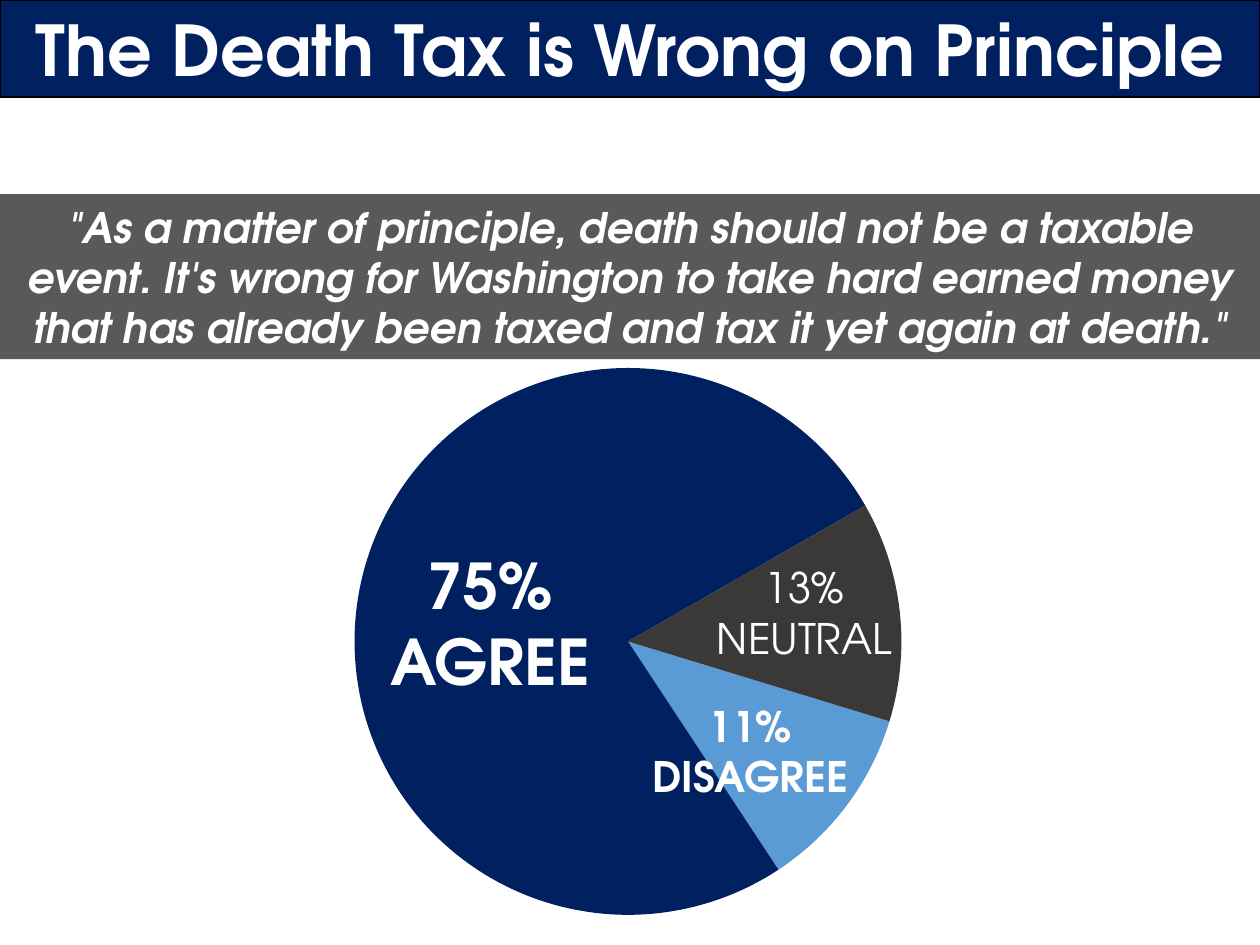
from dataclasses import dataclass

from lxml.etree import SubElement
from pptx import Presentation
from pptx.chart.data import CategoryChartData
from pptx.dml.color import RGBColor
from pptx.enum.chart import XL_CHART_TYPE as ChartType
from pptx.enum.shapes import MSO_SHAPE as Preset
from pptx.enum.text import MSO_ANCHOR as Anchor, MSO_AUTO_SIZE as AutoSize, PP_ALIGN as Align
from pptx.oxml.ns import qn
from pptx.slide import Slide
from pptx.text.text import TextFrame
from pptx.util import Pt

NAVY = RGBColor(0x00, 0x20, 0x60)
GRAY = RGBColor(0x59, 0x59, 0x59)
CHARCOAL = RGBColor(0x3B, 0x38, 0x38)
SKY = RGBColor(0x5B, 0x9B, 0xD5)
WHITE = RGBColor(0xFF, 0xFF, 0xFF)
BLACK = RGBColor(0x00, 0x00, 0x00)
FONT = "TeX Gyre Adventor"
PAGE_WIDTH, PAGE_HEIGHT = 720, 540
FIRST_SLICE_ANGLE = 107
PLOT_LAYOUT = {"x": 0.015, "y": 0.05, "w": 0.97, "h": 0.801}


@dataclass(frozen=True)
class SliceLabel:
    text: str
    left: float
    top: float
    width: float
    height: float
    size: int
    bold: bool = True


@dataclass(frozen=True)
class Slice:
    category: str
    value: int
    color: RGBColor


SLICES = (Slice("1", 11, SKY), Slice("2", 76, NAVY), Slice("3", 13, CHARCOAL))
LABELS = (
    SliceLabel("11%\nDISAGREE", 336.2, 396.7, 185, 65.5, 24),
    SliceLabel("75%\nAGREE", 154.1, 308.9, 252, 126, 36),
    SliceLabel("13%\nNEUTRAL", 367.2, 317.5, 185, 65.5, 24, bold=False),
)
QUOTE = (
    '"As a matter of principle, death should not be a taxable event. '
    "It's wrong for Washington to take hard earned money that has already "
    'been taxed and tax it yet again at death."'
)


def write_text(frame: TextFrame, text: str, size: int, bold: bool = True, italic: bool = False) -> None:
    frame.text = text
    frame.word_wrap = True
    frame.auto_size = AutoSize.NONE
    for para in frame.paragraphs:
        para.alignment = Align.CENTER
        for span in para.runs:
            font = span.font
            font.name, font.size = FONT, Pt(size)
            font.bold, font.italic = bold, italic
            font.color.rgb = WHITE


def add_title(page: Slide) -> None:
    title = page.shapes.title
    title.left, title.top, title.width, title.height = Pt(0), Pt(0), Pt(PAGE_WIDTH), Pt(55.4)
    title.fill.solid()
    title.fill.fore_color.rgb = NAVY
    title.line.color.rgb = BLACK
    title.line.width = Pt(0.75)
    write_text(title.text_frame, "The Death Tax is Wrong on Principle", 40)
    title.text_frame.vertical_anchor = Anchor.MIDDLE


def add_quote(page: Slide) -> None:
    band = page.shapes.add_shape(Preset.RECTANGLE, Pt(0), Pt(110.9), Pt(PAGE_WIDTH), Pt(94.3))
    band.shadow.inherit = False
    band.fill.solid()
    band.fill.fore_color.rgb = GRAY
    band.line.fill.background()
    write_text(band.text_frame, QUOTE, 24, italic=True)
    band.text_frame.vertical_anchor = Anchor.MIDDLE


def add_pie(page: Slide) -> None:
    data = CategoryChartData()
    data.categories = [piece.category for piece in SLICES]
    data.add_series("Series 1", [piece.value for piece in SLICES])
    chart = page.shapes.add_chart(
        ChartType.PIE, Pt(-46.8), Pt(190.8), Pt(811.4), Pt(390.2), data
    ).chart
    chart.has_title = False
    chart.has_legend = False
    chart.font.name, chart.font.size = "Calibri", Pt(18)
    chart.font.color.rgb = BLACK

    plot = chart.plots[0]
    plot.vary_by_categories = True
    for index, piece in enumerate(SLICES):
        point = plot.series[0].points[index].format
        point.fill.solid()
        point.fill.fore_color.rgb = piece.color
        point.line.fill.background()

    pie = chart.element.find(".//" + qn("c:pieChart"))
    angle = pie.find(qn("c:firstSliceAng"))
    if angle is None:
        angle = SubElement(pie, qn("c:firstSliceAng"))
    angle.set("val", str(FIRST_SLICE_ANGLE))

    area = chart.element.find(".//" + qn("c:plotArea"))
    layout = area.find(qn("c:layout"))
    if layout is None:
        layout = SubElement(area, qn("c:layout"))
        area.insert(0, layout)
    manual = SubElement(layout, qn("c:manualLayout"))
    settings = {"layoutTarget": "inner", "xMode": "edge", "yMode": "edge", **PLOT_LAYOUT}
    for name, value in settings.items():
        SubElement(manual, qn(f"c:{name}")).set("val", str(value))


def add_label(page: Slide, label: SliceLabel) -> None:
    box = page.shapes.add_textbox(Pt(label.left), Pt(label.top), Pt(label.width), Pt(label.height))
    write_text(box.text_frame, label.text, label.size, bold=label.bold)


def main() -> None:
    deck = Presentation()
    deck.slide_width, deck.slide_height = Pt(PAGE_WIDTH), Pt(PAGE_HEIGHT)
    page = deck.slides.add_slide(deck.slide_layouts[5])
    add_title(page)
    add_quote(page)
    add_pie(page)
    for label in LABELS:
        add_label(page, label)
    deck.save("out.pptx")


if __name__ == "__main__":
    main()
